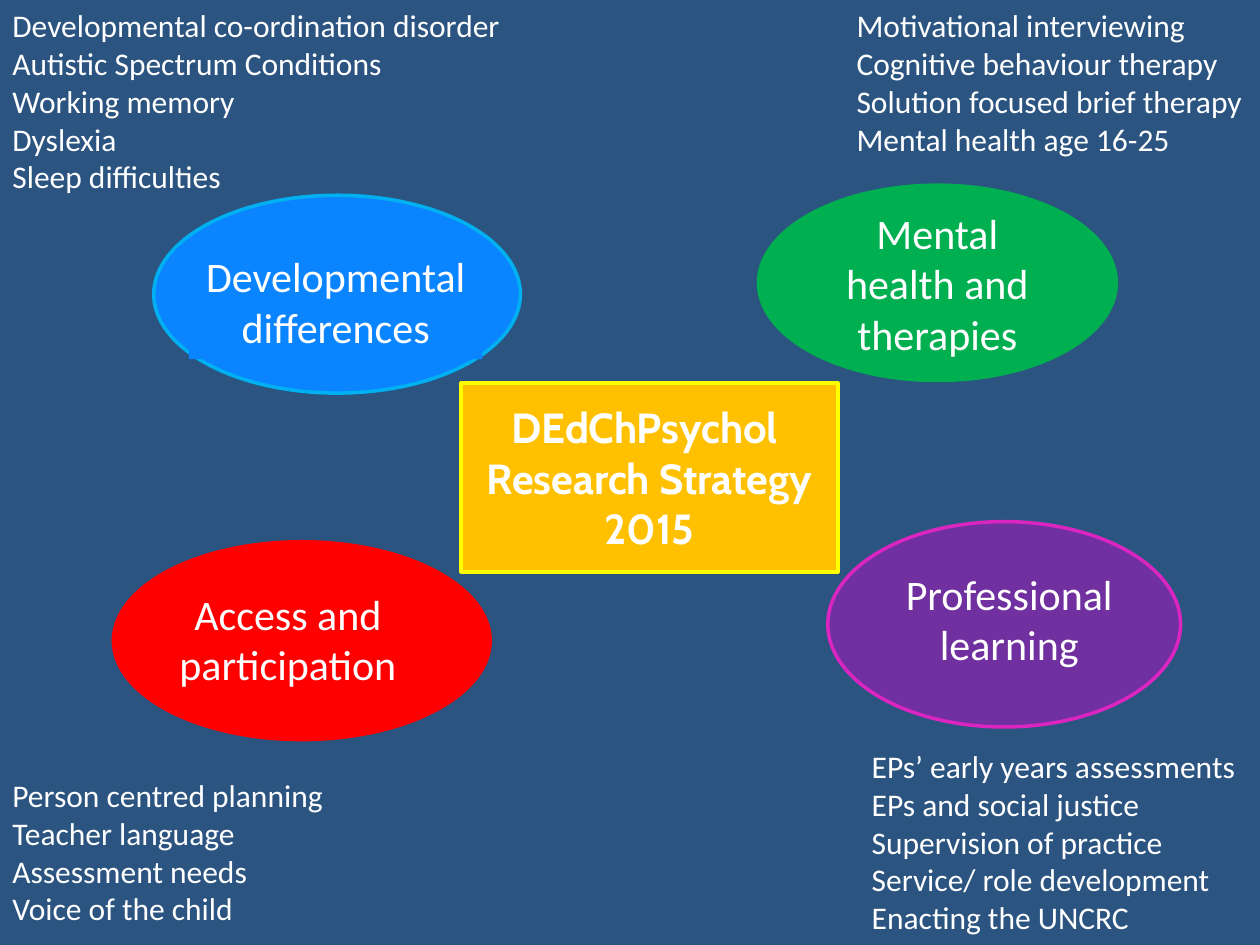
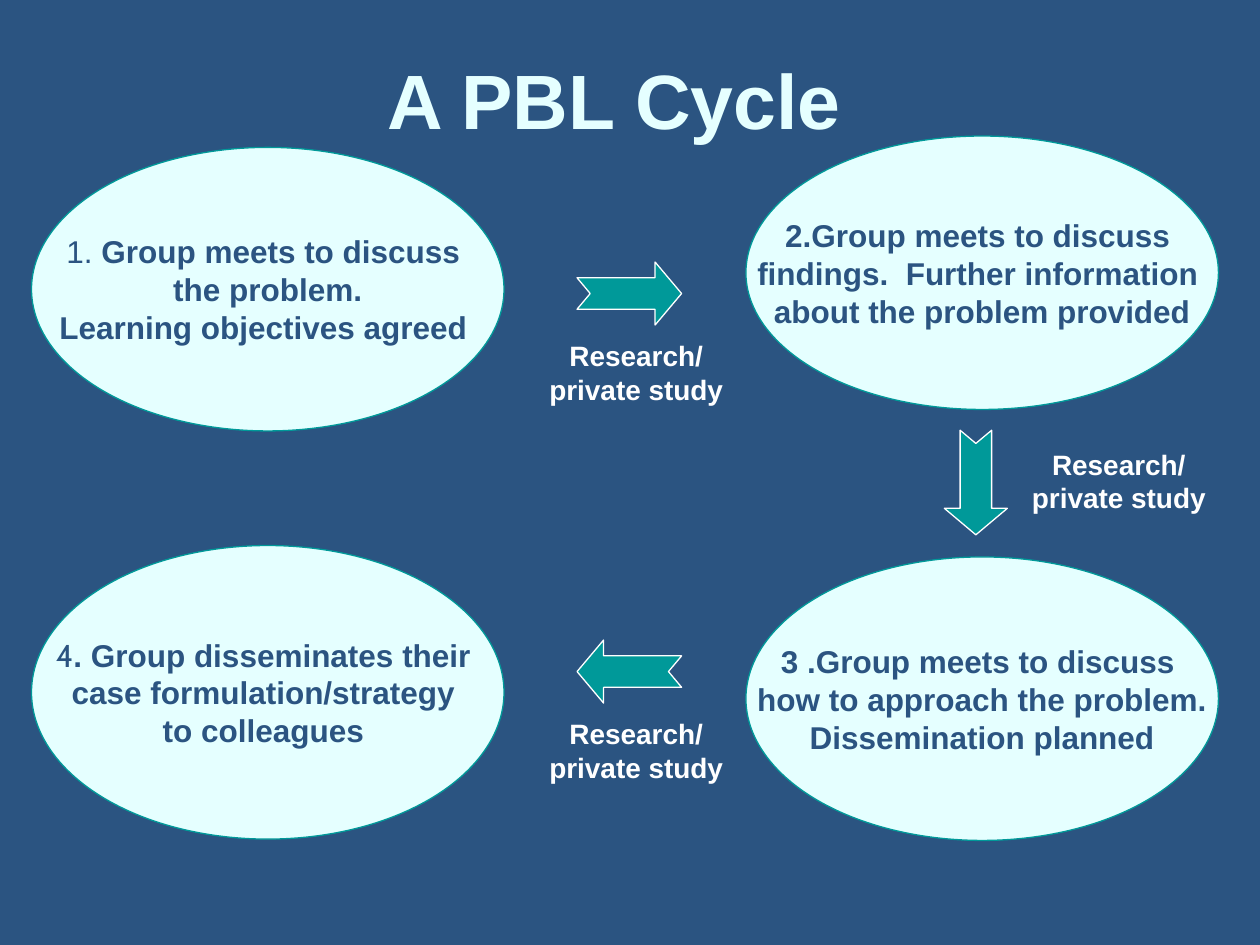
from pptx import Presentation, util as u
from pptx.dml.color import RGBColor
from pptx.enum import shapes, text

COLOURS = {
    "navy": "2B5481", "white": "FFFFFF", "ice": "E5FFFF", "teal": "009999",
    "green": "00B050", "blue": "0A85FF", "sky": "00B0F0", "red": "FF0000",
    "purple": "7030A0", "pink": "DB25C1", "amber": "FFC000", "yellow": "FFFF00",
}
SHAPE = shapes.MSO_SHAPE
TOP, MIDDLE, BOTTOM = text.MSO_ANCHOR.TOP, text.MSO_ANCHOR.MIDDLE, text.MSO_ANCHOR.BOTTOM
LEFT, CENTER = text.PP_ALIGN.LEFT, text.PP_ALIGN.CENTER


def add_figure(page, kind, place, fill, line=None, width=2):
    figure = page.shapes.add_shape(kind, *map(u.Inches, place))
    figure.shadow.inherit = False
    figure.fill.solid()
    figure.fill.fore_color.rgb = RGBColor.from_string(COLOURS[fill])
    if line:
        figure.line.color.rgb = RGBColor.from_string(COLOURS[line])
        figure.line.width = u.Pt(width)
    else:
        figure.line.fill.background()
    return figure


def write(box, lines, size, font, colour="white", bold=False, align=CENTER, anchor=TOP, wrap=True):
    frame = box.text_frame
    frame.word_wrap = wrap
    frame.vertical_anchor = anchor
    frame.text = "\n".join(lines)
    for para in frame.paragraphs:
        para.alignment = align
        for span in para.runs:
            span.font.size = u.Pt(size)
            span.font.name = font
            span.font.bold = bold
            span.font.color.rgb = RGBColor.from_string(COLOURS[colour])


deck = Presentation()
deck.slide_width, deck.slide_height = u.Inches(10), u.Inches(7.5)
pages = []
for number in range(2):
    page = deck.slides.add_slide(deck.slide_layouts[6])
    page.background.fill.solid()
    page.background.fill.fore_color.rgb = RGBColor.from_string(COLOURS["navy"])
    pages.append(page)
strategy, cycle = pages

themes = [
    ("Mental health and therapies", (6.02, 1.47, 2.84, 1.55), "green", "green", None),
    ("Developmental differences", (1.22, 1.55, 2.91, 1.57), "blue", "sky", (1.5, 1.94, 2.33, 0.91)),
    ("Access and participation", (0.9, 4.3, 2.99, 1.57), "red", "red", (0.83, 4.62, 2.91, 0.91)),
    ("Professional learning", (6.57, 4.14, 2.8, 1.63), "purple", "pink", (6.89, 4.46, 2.24, 0.91)),
]
for label, place, fill, line, label_place in themes:
    oval = add_figure(strategy, SHAPE.OVAL, place, fill, line)
    if label_place is None:
        write(oval, [label], 24, "Calibri", anchor=MIDDLE)
    else:
        box = add_figure(strategy, SHAPE.RECTANGLE, label_place, fill)
        if fill != "blue":
            box.fill.background()
        write(box, [label], 24, "Calibri")

topics = [
    ((0, 0, 4.12, 1.92), True, [
        "Developmental co-ordination disorder", "Autistic Spectrum Conditions",
        "Working memory", "Dyslexia", "Sleep difficulties"]),
    ((6.7, 0, 3.3, 1.31), False, [
        "Motivational interviewing", "Cognitive behaviour therapy",
        "Solution focused brief therapy", "Mental health age 16-25"]),
    ((0, 6.11, 2.7, 1.31), True, [
        "Person centred planning", "Teacher language", "Assessment needs", "Voice of the child"]),
    ((6.82, 5.88, 3.18, 1.62), False, [
        "EPs’ early years assessments", "EPs and social justice", "Supervision of practice",
        "Service/ role development", "Enacting the UNCRC"]),
]
for place, wrap, lines in topics:
    box = strategy.shapes.add_textbox(*map(u.Inches, place))
    write(box, lines, 18, "Calibri", align=LEFT, wrap=wrap)

centre = add_figure(strategy, SHAPE.RECTANGLE, (3.66, 3.04, 2.99, 1.5), "amber", "yellow")
write(centre, ["DEdChPsychol ", "Research Strategy 2015"], 24, "Cabin", bold=True, anchor=MIDDLE)

title = cycle.shapes.add_textbox(*map(u.Inches, (1.75, 0.25, 6.25, 1)))
write(title, ["A PBL Cycle"], 44, "Arial", "ice", bold=True, anchor=BOTTOM)
title.text_frame.margin_bottom = u.Inches(0.1)

steps = [
    (0.25, 1.17, 2.25, "1. ", "Arial", [
        "Group meets to discuss ", "the problem.", "Learning objectives agreed "]),
    (5.92, 1.08, 2.17, "", "Arial", [
        "2.Group meets to discuss ", "findings.  Further information ", "about the problem provided"]),
    (0.25, 4.33, 2.33, "4", "Cabin", [
        ". Group disseminates their ", "case formulation/strategy ", "to colleagues "]),
    (5.92, 4.42, 2.25, "", "Arial", [
        "3 .Group meets to discuss ", "how to approach the problem.", "Dissemination planned"]),
]
for left, top, height, prefix, prefix_font, lines in steps:
    oval = add_figure(cycle, SHAPE.OVAL, (left, top, 3.75, height), "ice", "teal", 0.75)
    write(oval, lines, 18, "Arial", "navy", bold=True, anchor=MIDDLE, wrap=False)
    if prefix:
        para = oval.text_frame.paragraphs[0]
        para.text = ""
        for words, font, bold in ((prefix, prefix_font, False), (lines[0], "Arial", True)):
            span = para.add_run()
            span.text = words
            span.font.size = u.Pt(18)
            span.font.name = font
            span.font.bold = bold
            span.font.color.rgb = RGBColor.from_string(COLOURS["navy"])

links = [
    (4.58, 2.08, 0, 4.25, 2.64),
    (4.58, 5.08, 180, 4.25, 5.64),
    (7.33, 3.58, 90, 8.08, 3.5),
]
for left, top, turn, label_left, label_top in links:
    arrow = add_figure(cycle, SHAPE.NOTCHED_RIGHT_ARROW, (left, top, 0.83, 0.5), "teal", "white", 0.75)
    arrow.adjustments[0], arrow.adjustments[1] = 0.5, 0.42
    arrow.rotation = turn
    box = cycle.shapes.add_textbox(*map(u.Inches, (label_left, label_top, 1.6, 0.64)))
    write(box, ["Research/", "private study"], 16, "Arial", bold=True, wrap=False)

deck.save("out.pptx")
